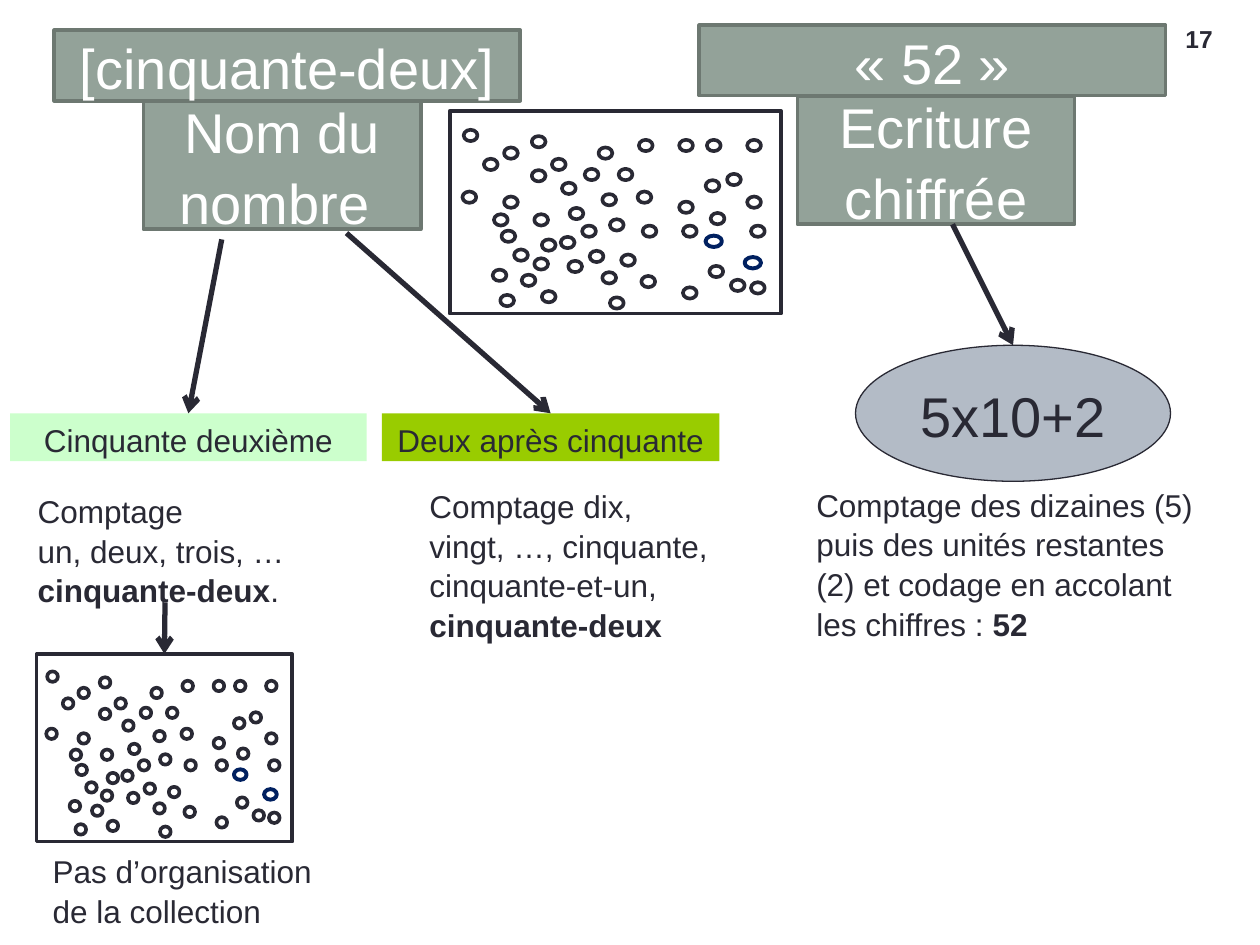
from lxml.etree import SubElement
from pptx import Presentation
from pptx.dml.color import RGBColor
from pptx.enum.shapes import MSO_CONNECTOR, MSO_SHAPE
from pptx.enum.text import MSO_ANCHOR, PP_ALIGN
from pptx.oxml.ns import qn
from pptx.util import Inches, Pt

THEME = {
    "font": "Arial", "ink": "292934", "white": "FFFFFF", "navy": "002060",
    "sage": "93A299", "sage_line": "6D7871", "blue_grey": "B3BBC6",
    "green": "99CC00", "pale_green": "CCFFCC",
    "heading": 32, "body": 18, "number": 14, "leading": 1.05,
    "outline": 2.08, "marked": 2.25, "thin": 0.75, "arrow": 3,
}

# Paragraphs are lists of (text, bold) runs; boxes are left, top, width, height.
PAGE_NUMBER = ([[("17", True)]], (9.31, 0.12, 0.5, 0.36))
HEADINGS = [
    ("Ecriture chiffrée", (6.33, 0.76, 2.2, 1.02)),
    ("Nom du nombre ", (1.14, 0.8, 2.2, 1.02)),
    ("[cinquante-deux]", (0.43, 0.24, 3.7, 0.56)),
    ("«\u00a052\u00a0»", (5.55, 0.2, 3.7, 0.56)),
]
LABELS = {
    "ordinal": ("Cinquante deuxième", (0.08, 3.28, 2.83, 0.38), "pale_green"),
    "successor": ("Deux après cinquante", (3.03, 3.28, 2.68, 0.38), "green"),
}
DECOMPOSITION = ("5x10+2", (6.79, 2.74, 2.5, 1.08))
EXPLANATIONS = [
    ([[("Comptage", False)],
      [("un, deux, trois, … ", False), ("cinquante-deux", True), (".", False)]],
     (0.2, 3.84, 2.64, 1.01)),
    ([[("Comptage dix, vingt, …, cinquante, cinquante-et-un, ", False),
       ("cinquante-deux", True)]], (3.31, 3.8, 2.43, 1.31)),
    ([[("Comptage des dizaines (5) puis des unités restantes (2) "
        "et codage en accolant les chiffres : ", False), ("52", True)]],
     (6.38, 3.79, 3.32, 1.31)),
    ([[("Pas d’organisation de la collection", False)]],
     (0.32, 6.7, 2.33, 0.71)),
]

# Both collections share one layout, given in the coordinates of the large frame.
LARGE_FRAME = (3.57, 0.88, 2.63, 1.61)
SMALL_FRAME = (0.29, 5.19, 2.03, 1.49)
TOKENS = [
    (3.98, 1.83), (4.3, 1.9), (4.3, 2.31), (4.14, 2.18), (3.97, 2.34),
    (4.52, 1.65), (4.84, 1.74), (4.84, 2.36), (4.68, 1.99), (4.51, 2.07),
    (5.07, 1.11), (5.39, 1.11), (5.39, 1.6), (4.91, 1.34), (5.06, 1.52),
    (5.61, 1.11), (5.93, 1.11), (5.93, 1.56), (5.77, 1.38), (5.6, 1.43),
    (3.68, 1.03), (4, 1.17), (4, 1.56), (3.84, 1.26), (3.67, 1.52),
    (4.22, 1.08), (4.75, 1.17), (4.64, 1.34), (4.38, 1.26), (4.22, 1.35),
    (5.1, 1.79), (5.42, 1.79), (5.42, 2.28), (4.93, 2.02), (5.09, 2.19),
    (5.64, 1.69), (5.96, 1.79), (5.96, 2.24), (5.8, 2.22), (5.63, 2.11),
    (3.92, 1.7), (4.24, 1.7), (4.24, 2.05), (4.08, 1.98), (3.91, 2.14),
    (4.46, 1.45), (4.78, 1.54), (4.78, 2.16), (4.62, 1.79), (4.45, 1.88),
]
MARKED_TOKENS = [(5.91, 2.04), (5.6, 1.87)]
TOKEN_SIZE = (0.11, 0.09)
MARKED_SIZE = (0.13, 0.09)


def color(name):
    return RGBColor.from_string(THEME[name])


def inches(values):
    return [Inches(value) for value in values]


def write(shape, paragraphs, size="body", ink="ink", align=PP_ALIGN.LEFT,
          anchor=MSO_ANCHOR.TOP, wrap=True):
    frame = shape.text_frame
    frame.word_wrap = wrap
    frame.vertical_anchor = anchor
    for index, runs in enumerate(paragraphs):
        paragraph = frame.add_paragraph() if index else frame.paragraphs[0]
        paragraph.alignment = align
        paragraph.line_spacing = THEME["leading"]
        for text, bold in runs:
            run = paragraph.add_run()
            run.text = text
            font = run.font
            font.name, font.size, font.bold = THEME["font"], Pt(THEME[size]), bold
            font.color.rgb = color(ink)


def add_shape(shapes, kind, box, fill=None, line=None, width="outline"):
    shape = shapes.add_shape(kind, *inches(box))
    shape.shadow.inherit = False
    if fill:
        shape.fill.solid()
        shape.fill.fore_color.rgb = color(fill)
    else:
        shape.fill.background()
    if line:
        shape.line.color.rgb = color(line)
        shape.line.width = Pt(THEME[width])
    else:
        shape.line.fill.background()
    return shape


def add_text(shapes, paragraphs, box, **text_format):
    write(shapes.add_textbox(*inches(box)), paragraphs, **text_format)


def add_collection(shapes, frame):
    """Draw the 52 tokens scaled into a frame, and return the frame's shape."""
    group = shapes.add_group_shape()
    outline = add_shape(group.shapes, MSO_SHAPE.RECTANGLE, frame, line="ink")
    scale_x, scale_y = frame[2] / LARGE_FRAME[2], frame[3] / LARGE_FRAME[3]
    for positions, size, token_format in (
        (TOKENS, TOKEN_SIZE, {"fill": "white", "line": "ink"}),
        (MARKED_TOKENS, MARKED_SIZE, {"line": "navy", "width": "marked"}),
    ):
        for left, top in positions:
            box = (frame[0] + (left - LARGE_FRAME[0]) * scale_x,
                   frame[1] + (top - LARGE_FRAME[1]) * scale_y,
                   size[0] * scale_x, size[1] * scale_y)
            add_shape(group.shapes, MSO_SHAPE.OVAL, box, **token_format)
    return outline


def add_arrow(shapes, start, target):
    """Draw an arrow from a point to the top middle of the target shape."""
    connector = shapes.add_connector(MSO_CONNECTOR.STRAIGHT, *inches(start + start))
    connector.end_connect(target, 0)
    connector.line.color.rgb = color("ink")
    connector.line.width = Pt(THEME["arrow"])
    SubElement(connector.line._get_or_add_ln(), qn("a:tailEnd"), type="arrow")
    SubElement(connector._element.spPr, qn("a:effectLst"))


def main():
    presentation = Presentation()
    presentation.slide_width, presentation.slide_height = Inches(10), Inches(7.5)
    shapes = presentation.slides.add_slide(presentation.slide_layouts[6]).shapes

    add_text(shapes, *PAGE_NUMBER, size="number", anchor=MSO_ANCHOR.MIDDLE)
    for paragraphs, box in EXPLANATIONS:
        add_text(shapes, paragraphs, box)

    text, box = DECOMPOSITION
    decomposition = add_shape(shapes, MSO_SHAPE.OVAL, box, fill="blue_grey",
                              line="ink", width="thin")
    write(decomposition, [[(text, False)]], size="heading", wrap=False,
          align=PP_ALIGN.CENTER, anchor=MSO_ANCHOR.MIDDLE)

    labels = {}
    for name, (text, box, fill) in LABELS.items():
        labels[name] = add_shape(shapes, MSO_SHAPE.RECTANGLE, box, fill=fill)
        write(labels[name], [[(text, False)]], align=PP_ALIGN.CENTER)

    add_collection(shapes, LARGE_FRAME)
    counted_collection = add_collection(shapes, SMALL_FRAME)

    for text, box in HEADINGS:
        heading = add_shape(shapes, MSO_SHAPE.RECTANGLE, box, fill="sage",
                            line="sage_line")
        write(heading, [[(text, False)]], size="heading", ink="white",
              align=PP_ALIGN.CENTER, anchor=MSO_ANCHOR.MIDDLE)

    for start, target in (
        ((1.76, 1.9), labels["ordinal"]),
        ((2.75, 1.85), labels["successor"]),
        ((7.56, 1.78), decomposition),
        ((1.31, 4.78), counted_collection),
    ):
        add_arrow(shapes, start, target)

    presentation.save("out.pptx")


if __name__ == "__main__":
    main()
